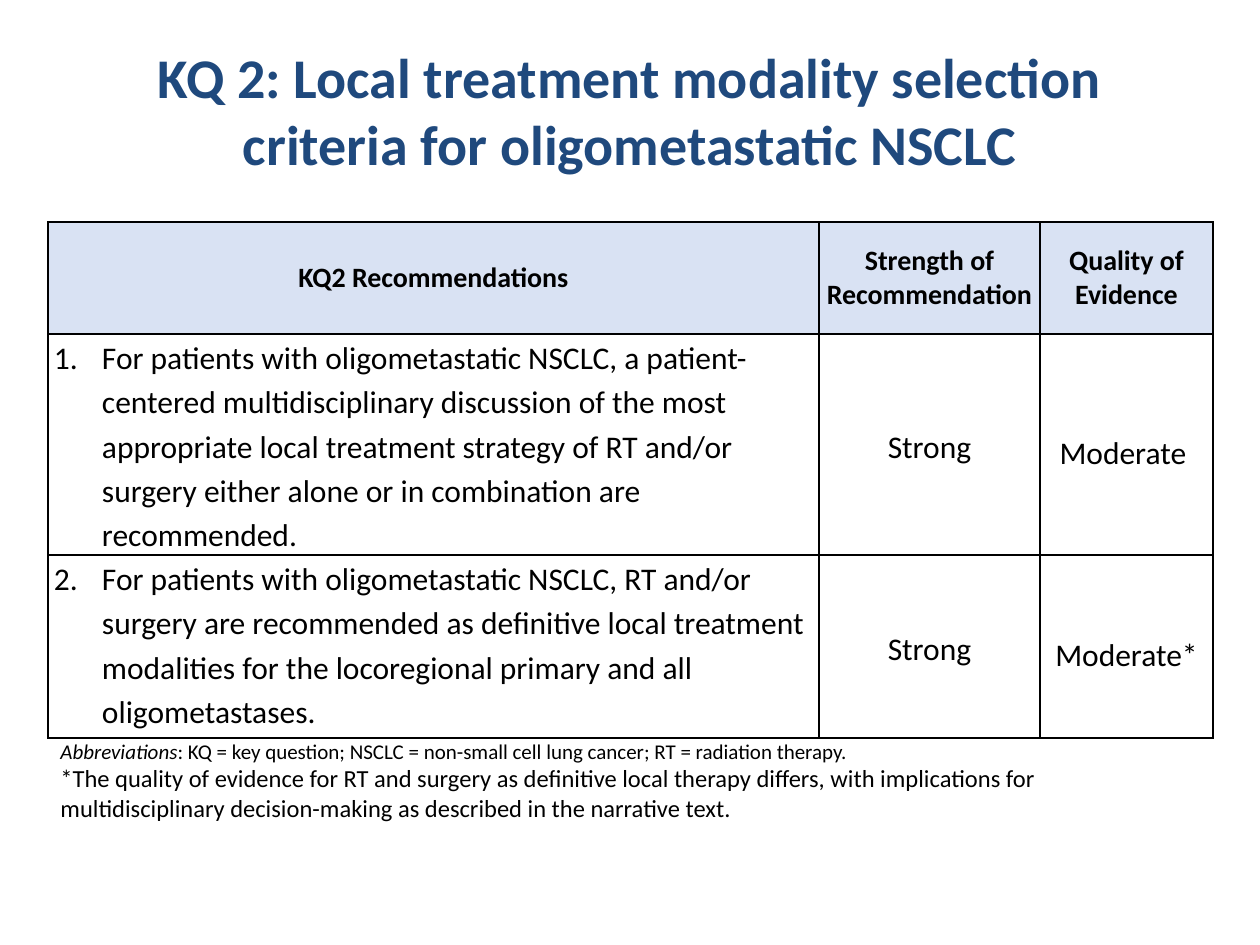
from dataclasses import dataclass

from lxml.etree import SubElement
from pptx import Presentation
from pptx.dml.color import RGBColor
from pptx.enum.text import MSO_ANCHOR as Anchor, MSO_AUTO_SIZE as AutoSize, PP_ALIGN as Align
from pptx.oxml.ns import qn
from pptx.util import Pt

PX = 914400 / 126
FONT = "Calibri"
BLACK = RGBColor(0x00, 0x00, 0x00)
NAVY = RGBColor(0x1F, 0x49, 0x7D)
PALE_BLUE = RGBColor(0xD9, 0xE2, 0xF3)

COL_WIDTHS = (771, 221, 173)
ROW_HEIGHTS = (112, 215, 183)
HEADERS = ("KQ2 Recommendations", "Strength of Recommendation", "Quality of Evidence")


@dataclass
class Recommendation:
    text: str
    strength: str
    quality: str


RECOMMENDATIONS = (
    Recommendation(
        "For patients with oligometastatic NSCLC, a patient-centered multidisciplinary "
        "discussion of the most appropriate local treatment strategy of RT and/or surgery "
        "either alone or in combination are recommended.", "Strong", "Moderate "),
    Recommendation(
        "For patients with oligometastatic NSCLC, RT and/or surgery are recommended as "
        "definitive local treatment modalities for the locoregional primary and all "
        "oligometastases.", "Strong", "Moderate*"),
)


def px(n: int) -> int:
    return round(n * PX)


def add_run(p, text: str, size: int, color: RGBColor = BLACK, **styles) -> None:
    r = p.add_run()
    r.text = text
    r.font.color.rgb = color
    for name, value in {"name": FONT, "size": Pt(size), "bold": False, **styles}.items():
        setattr(r.font, name, value)


def add_number(p, start: int) -> None:
    """Number the paragraph automatically, with a hanging indent."""
    pPr = p._p.get_or_add_pPr()
    pPr.set("marL", str(px(48)))
    pPr.set("indent", str(-px(48)))
    SubElement(pPr, qn("a:buFont"), typeface="+mj-lt")
    SubElement(pPr, qn("a:buAutoNum"), type="arabicPeriod", startAt=str(start))


def add_borders(cell) -> None:
    tcPr = cell._tc.get_or_add_tcPr()
    for side in ("lnL", "lnR", "lnT", "lnB"):
        ln = SubElement(tcPr, qn(f"a:{side}"), w=str(Pt(1)))
        fill = SubElement(ln, qn("a:solidFill"))
        SubElement(fill, qn("a:srgbClr"), val=str(BLACK))


def format_cell(cell, anchor: Anchor = Anchor.MIDDLE) -> None:
    margins = {"margin_left": px(6), "margin_right": px(6), "margin_top": 0, "margin_bottom": 0}
    for name, value in {**margins, "vertical_anchor": anchor}.items():
        setattr(cell, name, value)
    add_borders(cell)
    cell.fill.background()


def fill_header(table) -> None:
    for cell, text in zip(table.rows[0].cells, HEADERS):
        format_cell(cell)
        cell.fill.solid()
        cell.fill.fore_color.rgb = PALE_BLUE
        p = cell.text_frame.paragraphs[0]
        p.alignment = Align.CENTER
        add_run(p, text, 16, bold=True)


def fill_recommendation(table, number: int, rec: Recommendation) -> None:
    statement, *ratings = table.rows[number].cells
    format_cell(statement, Anchor.TOP)
    p = statement.text_frame.paragraphs[0]
    add_number(p, number)
    p.line_spacing = 1.15
    add_run(p, rec.text, 18)
    for cell, text, spacing in zip(ratings, (rec.strength, rec.quality), (1.15, 1.5)):
        format_cell(cell)
        p = cell.text_frame.paragraphs[0]
        p.alignment = Align.CENTER
        p.line_spacing = spacing
        add_run(p, text, 18)


def add_title(s) -> None:
    title = s.shapes.title
    place = {"left": px(63), "top": px(40), "width": px(1134), "height": px(139)}
    for name, value in place.items():
        setattr(title, name, value)
    tf = title.text_frame
    for name, value in {"word_wrap": True, "auto_size": AutoSize.NONE,
                        "vertical_anchor": Anchor.MIDDLE}.items():
        setattr(tf, name, value)
    p = tf.paragraphs[0]
    p.alignment = Align.CENTER
    add_run(p, "KQ 2: Local treatment modality selection criteria for oligometastatic NSCLC",
            32, NAVY, bold=True)


def add_recommendation_table(s) -> None:
    table = s.shapes.add_table(len(ROW_HEIGHTS), len(COL_WIDTHS), px(48), px(222),
                               px(sum(COL_WIDTHS)), px(sum(ROW_HEIGHTS))).table
    table.horz_banding = False
    for col, width in zip(table.columns, COL_WIDTHS):
        col.width = px(width)
    for row, height in zip(table.rows, ROW_HEIGHTS):
        row.height = px(height)
    fill_header(table)
    for number, rec in enumerate(RECOMMENDATIONS, 1):
        fill_recommendation(table, number, rec)


def add_footnotes(s) -> None:
    tf = s.shapes.add_textbox(px(48), px(732), px(1104), px(123)).text_frame
    tf.word_wrap = True
    tf.auto_size = AutoSize.SHAPE_TO_FIT_TEXT
    p = tf.paragraphs[0]
    add_run(p, "Abbreviations", 12, italic=True)
    add_run(p, ": KQ = key question; NSCLC = non-small cell lung cancer; "
               "RT = radiation therapy.", 12)
    add_run(tf.add_paragraph(),
            "*The quality of evidence for RT and surgery as definitive local therapy differs, "
            "with implications for multidisciplinary decision-making as described in the "
            "narrative text.", 14)


def main() -> None:
    prs = Presentation()
    prs.slide_width, prs.slide_height = px(1260), px(945)
    s = prs.slides.add_slide(prs.slide_layouts[5])
    add_title(s)
    add_recommendation_table(s)
    add_footnotes(s)
    prs.save("out.pptx")


if __name__ == "__main__":
    main()
